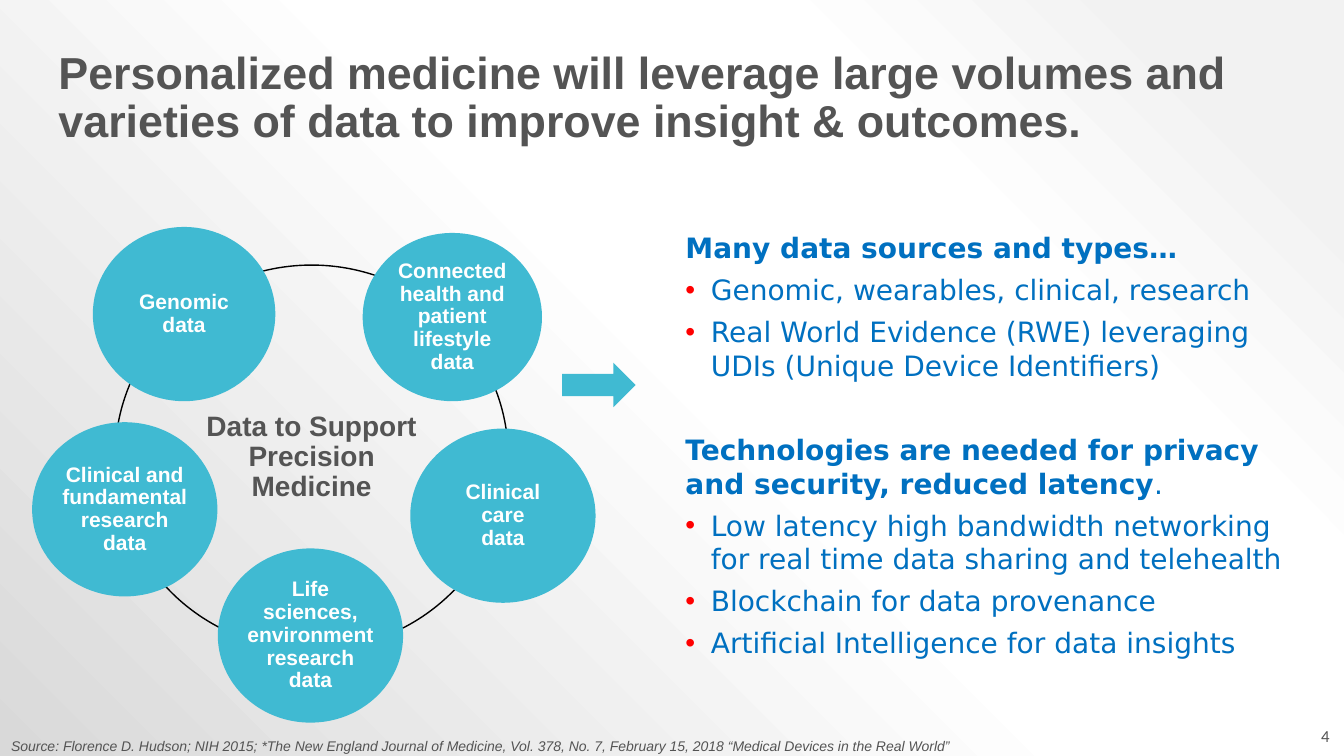
import pptx
import pptx.dml.color
import pptx.enum.shapes
import pptx.enum.text
import pptx.oxml
import pptx.oxml.ns
import pptx.util
from pptx.util import Cm

SHAPE = pptx.enum.shapes.MSO_SHAPE
ANCHOR = pptx.enum.text.MSO_ANCHOR
ALIGN = pptx.enum.text.PP_ALIGN
NS = pptx.oxml.ns.nsdecls("a")

TEAL, GREY, BLUE, RED, WHITE, BLACK = (
    "40BAD2", "545454", "0070C0", "FF0000", "FFFFFF", "000000")

# Ellipses round the ring: text, left, top, width, height in cm
DATA_SOURCES = [
    ("Connected health and patient lifestyle data", 9.14, 5.87, 4.52, 4.24),
    ("Genomic\ndata", 2.34, 5.72, 4.6, 4.39),
    ("Clinical and fundamental research\ndata", 0.81, 10.64, 4.67, 4.39),
    ("Clinical\ncare\ndata", 10.34, 10.8, 4.67, 4.39),
    ("Life sciences, environment research data", 5.49, 13.82, 4.67, 4.39),
]

# Heading, its closing mark, space before in points, bullets
TOPICS = [
    ("Many data sources and types…", "", 0, [
        "Genomic, wearables, clinical, research",
        "Real World Evidence (RWE) leveraging UDIs (Unique Device Identifiers)",
    ]),
    ("Technologies are needed for privacy and security, reduced latency", ".", 30, [
        "Low latency high bandwidth networking for real time data sharing and telehealth",
        "Blockchain for data provenance",
        "Artificial Intelligence for data insights",
    ]),
]


def rgb(color):
    return pptx.dml.color.RGBColor.from_string(color)


def place(shape, left, top, width, height):
    shape.left, shape.top = Cm(left), Cm(top)
    shape.width, shape.height = Cm(width), Cm(height)


def set_font(paragraph, size, color, bold=None, italic=None, name="Arial"):
    font = paragraph.font
    font.name, font.size = name, pptx.util.Pt(size)
    font.bold, font.italic = bold, italic
    font.color.rgb = rgb(color)


def write(frame, text, size, color, align=ALIGN.LEFT, spacing=0.9, **style):
    frame.word_wrap = True
    frame.text = text
    for paragraph in frame.paragraphs:
        paragraph.alignment = align
        paragraph.line_spacing = spacing
        set_font(paragraph, size, color, **style)


def add_background(slide):
    slide.background.fill.gradient()
    gradient = slide.element.find(".//" + pptx.oxml.ns.qn("a:gradFill"))
    for child in list(gradient):
        gradient.remove(child)
    stops = [(10, "F2F2F2"), (28, WHITE), (48, WHITE), (100, "D9D9D9")]
    stop_xml = "".join(f'<a:gs pos="{pos * 1000}"><a:srgbClr val="{color}"/></a:gs>'
                       for pos, color in stops)
    gradient.append(pptx.oxml.parse_xml(f"<a:gsLst {NS}>{stop_xml}</a:gsLst>"))
    gradient.append(pptx.oxml.parse_xml(
        f'<a:path {NS} path="circle"><a:fillToRect l="100000" b="100000"/></a:path>'))


def add_figure(slide, preset, box, fill=None, line=None):
    figure = slide.shapes.add_shape(preset, *map(Cm, box))
    figure.shadow.inherit = False
    if fill:
        figure.fill.solid()
        figure.fill.fore_color.rgb = rgb(fill)
    else:
        figure.fill.background()
    if line:
        figure.line.color.rgb = rgb(line)
        figure.line.width = pptx.util.Pt(1)
    else:
        figure.line.fill.background()
    return figure


def add_ellipse(slide, text, box, size, color, margins=(0, 0), **look):
    ellipse = add_figure(slide, SHAPE.OVAL, box, **look)
    frame = ellipse.text_frame
    frame.vertical_anchor = ANCHOR.MIDDLE
    frame.margin_left = frame.margin_right = Cm(margins[0])
    frame.margin_top = frame.margin_bottom = Cm(margins[1])
    write(frame, text, size, color, ALIGN.CENTER, bold=True)


def add_note(slide, text, box, size, anchor=ANCHOR.TOP, **style):
    note = slide.shapes.add_textbox(*map(Cm, box))
    note.text_frame.vertical_anchor = anchor
    write(note.text_frame, text, size, GREY, **style)


def add_topic_line(paragraph, before, bulleted):
    paragraph.space_before = pptx.util.Pt(before)
    paragraph.space_after = pptx.util.Pt(6)
    properties = paragraph._p.get_or_add_pPr()
    indent = Cm(0.64) if bulleted else 0
    properties.set("marL", str(indent))
    properties.set("indent", str(-indent))
    if bulleted:
        marks = [f'<a:buClr {NS}><a:srgbClr val="{RED}"/></a:buClr>',
                 f'<a:buFont {NS} typeface="Arial"/>',
                 f'<a:buChar {NS} char="•"/>']
    else:
        marks = [f"<a:buNone {NS}/>"]
    for mark in marks:
        properties.append(pptx.oxml.parse_xml(mark))
    set_font(paragraph, 20, BLUE, name="DejaVu Sans")


def fill_topics(body):
    place(body, 17.02, 5.69, 15.98, 9.96)
    frame = body.text_frame
    frame.auto_size = pptx.enum.text.MSO_AUTO_SIZE.NONE
    paragraph = frame.paragraphs[0]
    for number, (heading, closing, before, bullets) in enumerate(TOPICS):
        if number:
            paragraph = frame.add_paragraph()
        add_topic_line(paragraph, before, bulleted=False)
        heading_run = paragraph.add_run()
        heading_run.text = heading
        heading_run.font.bold = True
        if closing:
            paragraph.add_run().text = closing
        for bullet in bullets:
            item = frame.add_paragraph()
            add_topic_line(item, 0, bulleted=True)
            item.add_run().text = bullet


def main():
    deck = pptx.Presentation()
    deck.slide_width, deck.slide_height = Cm(33.87), Cm(19.05)
    slide = deck.slides.add_slide(deck.slide_layouts[1])
    add_background(slide)

    # Title
    title = slide.shapes.title
    place(title, 1.22, 1.14, 31.8, 4.78)
    title.text_frame.vertical_anchor = ANCHOR.TOP
    title.text_frame.auto_size = pptx.enum.text.MSO_AUTO_SIZE.NONE
    write(title.text_frame,
          "Personalized medicine will leverage large volumes and varieties of data "
          "to improve insight & outcomes.", 32, GREY, bold=True)

    # Ring of data sources, with an arrow to the topics
    add_figure(slide, SHAPE.RIGHT_ARROW, (14.17, 9.14, 1.85, 1.12), fill=TEAL)
    add_ellipse(slide, "Data to Support\vPrecision Medicine", (2.9, 6.68, 9.91, 9.7),
                20, GREY, margins=(0.69, 0.53), line=BLACK)
    for text, *box in DATA_SOURCES:
        add_ellipse(slide, text, box, 15, WHITE, fill=TEAL)

    # Topics
    fill_topics(slide.placeholders[1])

    # Source and page number
    add_note(slide,
             "Source: Florence D. Hudson; NIH 2015; *The New England Journal of Medicine, "
             "Vol. 378, No. 7, February 15, 2018 “Medical Devices in the Real World”",
             (0.03, 18.52, 29.18, 0.46), 10, italic=True)
    add_note(slide, "4", (26.14, 18.03, 7.62, 1.02), 12, ANCHOR.MIDDLE,
             align=ALIGN.RIGHT, spacing=1.0, name="Calibri")

    deck.save("out.pptx")


if __name__ == "__main__":
    main()
